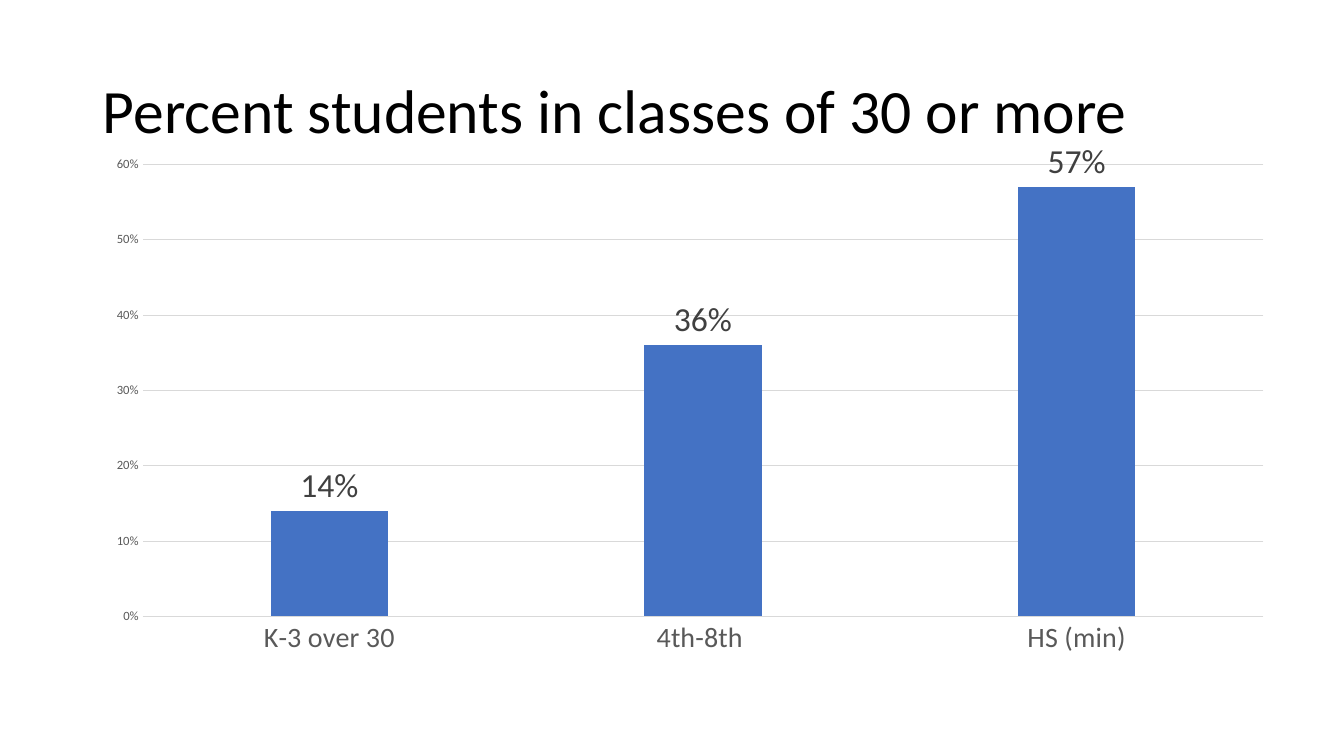
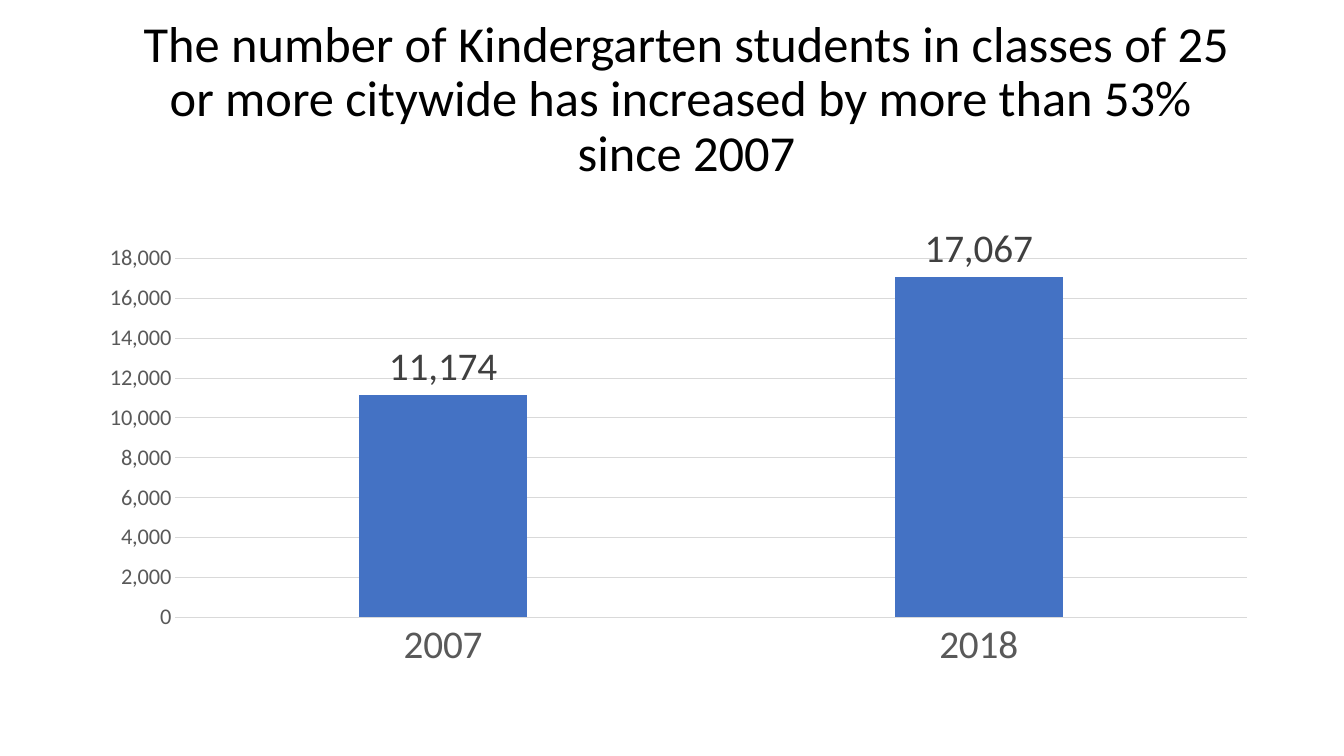
"""Build two class-size slides, each with a title and a column chart."""
from dataclasses import dataclass

from pptx import Presentation
from pptx.chart.data import CategoryChartData
from pptx.dml.color import RGBColor
from pptx.enum.chart import XL_CHART_TYPE, XL_LABEL_POSITION, XL_TICK_MARK
from pptx.enum.text import MSO_ANCHOR, MSO_AUTO_SIZE, PP_ALIGN
from pptx.oxml import parse_xml
from pptx.oxml.ns import nsdecls
from pptx.util import Inches, Pt

COLUMN = XL_CHART_TYPE.COLUMN_CLUSTERED
OUTER = XL_LABEL_POSITION.OUTSIDE_END
NO_TICK = XL_TICK_MARK.NONE
MIDDLE = MSO_ANCHOR.MIDDLE
NO_FIT = MSO_AUTO_SIZE.NONE
LEFT, CENTER = PP_ALIGN.LEFT, PP_ALIGN.CENTER
TITLE_ONLY = 5


@dataclass(frozen=True)
class Theme:
    face: str = "Calibri"
    ink: str = "000000"
    bar: str = "4472C4"
    grid: str = "D9D9D9"
    axis: str = "595959"
    label: str = "404040"
    big: int = 44
    head: int = 36
    huge: int = 28
    large: int = 24
    mid: int = 20
    small: int = 16
    base: int = 10
    tiny: int = 9
    hair: float = 0.75


class Deck:
    def __init__(self, theme):
        self.theme = theme
        self.show = Presentation()
        self.show.slide_width = Inches(13.33)
        self.show.slide_height = Inches(7.5)
        self.slide = None

    def add(self):
        self.slide = self.show.slides.add_slide(self.show.slide_layouts[TITLE_ONLY])

    def font(self, font, size, color):
        font.name = self.theme.face
        font.size = Pt(size)
        font.color.rgb = RGBColor.from_string(color)

    def rule(self, line):
        line.color.rgb = RGBColor.from_string(self.theme.grid)
        line.width = Pt(self.theme.hair)

    def title(self, text, left, top, size, align):
        box = self.slide.shapes.title
        box.left, box.top = Inches(left), Inches(top)
        box.width, box.height = Inches(11.5), Inches(1.45)
        frame = box.text_frame
        frame.text = text
        frame.word_wrap = True
        frame.auto_size = NO_FIT
        frame.vertical_anchor = MIDDLE
        for para in frame.paragraphs:
            para.alignment = align
            para.line_spacing = 0.9
            for run in para.runs:
                self.font(run.font, size, self.theme.ink)

    def chart(self, area, name, points, code, scale, sizes, plot):
        theme = self.theme
        data = CategoryChartData(number_format=code)
        data.categories = list(points)
        data.add_series(name, list(points.values()))
        frame = self.slide.shapes.add_chart(COLUMN, *map(Inches, area), data)
        chart = frame.chart
        chart.has_title = False
        chart.has_legend = False
        self.font(chart.font, theme.base, theme.ink)
        label, cat, val = sizes
        self.axes(chart, code, scale, cat, val)
        self.bars(chart.plots[0], code, label)
        self.layout(chart, plot)

    def axes(self, chart, code, scale, cat, val):
        for axis, size in ((chart.category_axis, cat), (chart.value_axis, val)):
            axis.major_tick_mark = axis.minor_tick_mark = NO_TICK
            self.font(axis.tick_labels.font, size, self.theme.axis)
        self.rule(chart.category_axis.format.line)
        axis = chart.value_axis
        axis.format.line.fill.background()
        axis.minimum_scale = 0
        axis.maximum_scale, axis.major_unit = scale
        axis.tick_labels.number_format = code
        axis.tick_labels.number_format_is_linked = False
        self.rule(axis.major_gridlines.format.line)

    def bars(self, plot, code, size):
        plot.gap_width = 219
        plot.overlap = -27
        plot.vary_by_categories = False
        fill = plot.series[0].format.fill
        fill.solid()
        fill.fore_color.rgb = RGBColor.from_string(self.theme.bar)
        plot.has_data_labels = True
        labels = plot.data_labels
        labels.show_value = True
        labels.position = OUTER
        labels.number_format = code
        labels.number_format_is_linked = False
        self.font(labels.font, size, self.theme.label)

    def layout(self, chart, plot):
        area = chart.element.xpath(".//c:plotArea")[0]
        for old in area.xpath("./c:layout"):
            area.remove(old)
        sides = "".join(
            f'<c:{key} val="{part}"/>' for key, part in zip("xywh", plot)
        )
        area.insert(0, parse_xml(
            f'<c:layout {nsdecls("c")}><c:manualLayout>'
            '<c:layoutTarget val="inner"/>'
            '<c:xMode val="edge"/><c:yMode val="edge"/>'
            f"{sides}</c:manualLayout></c:layout>"
        ))

    def save(self):
        self.show.save("out.pptx")


def main():
    theme = Theme()
    deck = Deck(theme)

    deck.add()
    deck.title("Percent students in classes of 30 or more", 0.92, 0.4, theme.big, LEFT)
    deck.chart(
        area=(0.63, 0.59, 12.07, 6.51),
        name="citywide",
        points={"K-3 over 30": 0.14, "4th-8th ": 0.36, "HS (min)": 0.57},
        code="0%",
        scale=(0.6, 0.1),
        sizes=(theme.large, theme.mid, theme.tiny),
        plot=(0.065, 0.16, 0.921, 0.689),
    )

    deck.add()
    deck.title(
        "The number of Kindergarten students in classes of 25 or more "
        "citywide has increased by more than 53% \vsince 2007",
        1.06, 0.27, theme.head, CENTER,
    )
    deck.chart(
        area=(1.06, 1.96, 11.5, 5.08),
        name="Series 1",
        points={"2007": 11174, "2018": 17067},
        code="#,##0",
        scale=(18000, 2000),
        sizes=(theme.huge, theme.huge, theme.small),
        plot=(0.059, 0.119, 0.924, 0.701),
    )
    deck.save()


if __name__ == "__main__":
    main()
